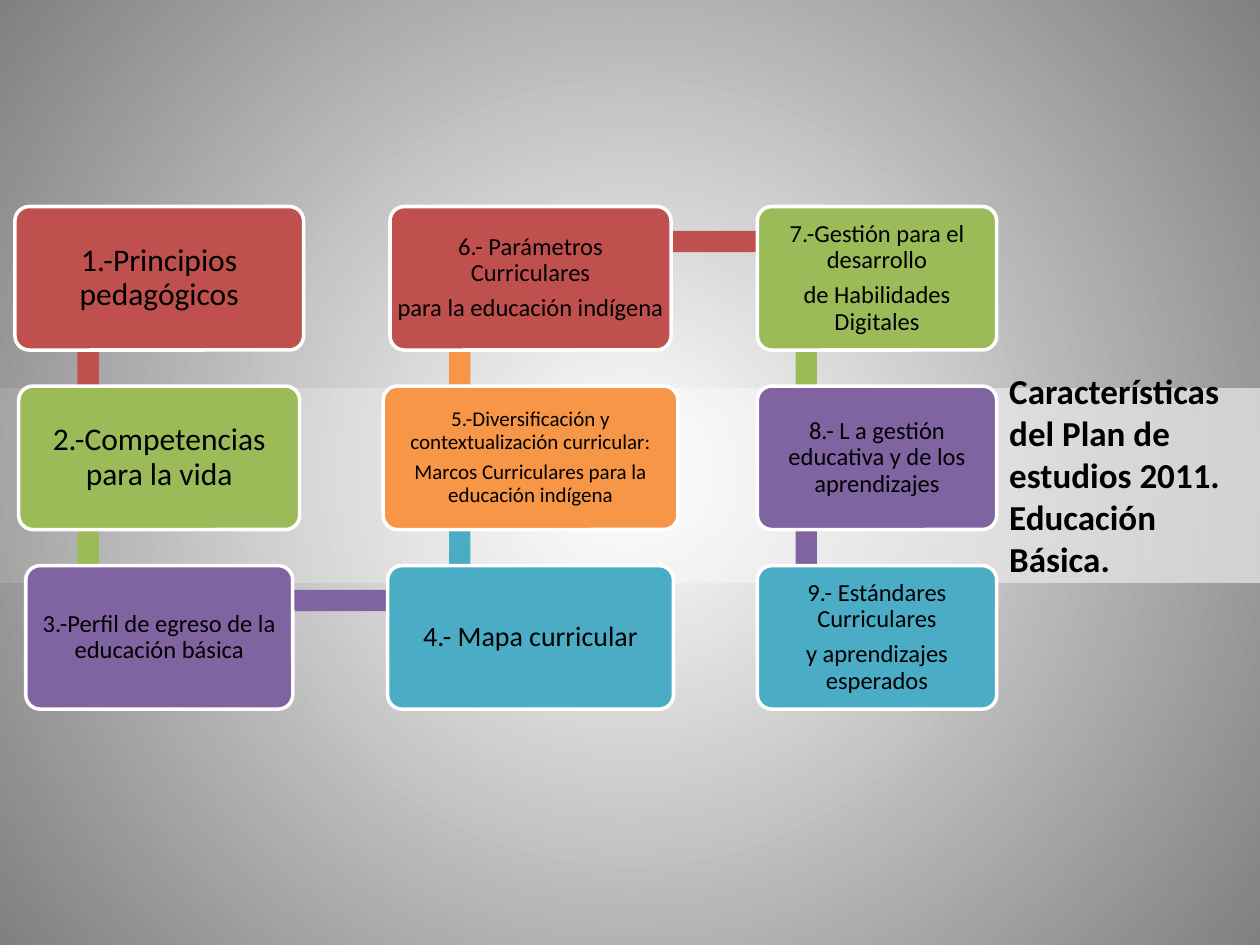
"""Build the slide on the features of the 2011 study plan."""
import pptx
import pptx.dml.color
import pptx.enum.shapes
import pptx.enum.text
import pptx.oxml
import pptx.oxml.ns
import pptx.util
from lxml import etree

Pt = pptx.util.Pt
SHAPE = pptx.enum.shapes.MSO_SHAPE
ALIGN = pptx.enum.text.PP_ALIGN
ANCHOR = pptx.enum.text.MSO_ANCHOR

RED, GREEN, PURPLE = "C0504D", "9BBB59", "8064A2"
TEAL, ORANGE = "4BACC6", "F79646"
WHITE, BLACK, GREY = "FFFFFF", "000000", "808080"

CENTRES = (91, 303.2, 501.2)
BAR_XS = (50.4, 262.8, 460.8)
TOP, ROW_STEP, BOX_H = 118, 102.6, 82
BAR_DROP, BAR_W = 20, 12.2

STEPS = [
    (0, 0, 165, RED, 18, "1.-Principios pedagógicos"),
    (0, 1, 160.6, GREEN, 18, "2.-Competencias para la vida"),
    (0, 2, 152.6, PURPLE, 14, "3.-Perfil de egreso de la educación básica"),
    (1, 2, 163.4, TEAL, 16, "4.- Mapa curricular"),
    (1, 1, 168.5, ORANGE, 12, "5.-Diversificación y contextualización curricular:\n"
                              "Marcos Curriculares para la educación indígena"),
    (1, 0, 160.6, RED, 14, "6.- Parámetros Curriculares\npara la educación indígena"),
    (2, 0, 136.8, GREEN, 14, "7.-Gestión para el desarrollo\nde Habilidades Digitales"),
    (2, 1, 136.8, PURPLE, 14, "8.- L a gestión educativa y de los aprendizajes"),
    (2, 2, 136.8, TEAL, 14, "9.- Estándares Curriculares\ny aprendizajes esperados"),
]
TITLE = "Características\ndel Plan de estudios 2011.\nEducación Básica."


def rgb(value):
    """Return the colour for a hex string."""
    return pptx.dml.color.RGBColor.from_string(value)


def set_gradient(fill, first, last):
    """Give a fill a gradient of two colours."""
    fill.gradient()
    for stop, colour, position in zip(fill.gradient_stops, (first, last), (0, 1)):
        stop.color.rgb = rgb(colour)
        stop.position = position


def add_background(s):
    """Fill the slide with a gradient that spreads from its centre."""
    set_gradient(s.background.fill, WHITE, GREY)
    grad = s._element.xpath(".//p:bg//a:gradFill")[0]
    for lin in grad.xpath("a:lin"):
        grad.remove(lin)
    grad.append(pptx.oxml.parse_xml(
        f'<a:path {pptx.oxml.ns.nsdecls("a")} path="circle">'
        '<a:fillToRect l="50000" t="50000" r="50000" b="50000"/></a:path>'))


def add_block(s, kind, left, top, width, height):
    """Add a preset shape without shadow or line."""
    sp = s.shapes.add_shape(kind, Pt(left), Pt(top), Pt(width), Pt(height))
    sp.shadow.inherit = False
    sp.line.fill.background()
    return sp


def add_band(s):
    """Add the translucent band across the slide."""
    sp = add_block(s, SHAPE.RECTANGLE, 0, 221.8, 720, 110.9)
    set_gradient(sp.fill, WHITE, WHITE)
    sp.fill.gradient_angle = 0
    for clr, opacity in zip(sp._element.xpath(".//a:gs/a:srgbClr"), (12, 57)):
        etree.SubElement(clr, pptx.oxml.ns.qn("a:alpha"), val=str(opacity * 1000))


def set_text(tf, text, size, align, bold=False):
    """Write paragraphs into a text frame and format them."""
    tf.text = text
    tf.word_wrap = True
    for p in tf.paragraphs:
        p.alignment = align
        for r in p.runs:
            r.font.name = "Calibri"
            r.font.size = Pt(size)
            r.font.bold = bold
            r.font.color.rgb = rgb(BLACK)


def place_title(s):
    """Move the title to the right, in front of the band."""
    sp = s.shapes.title
    s.shapes._spTree.append(sp._element)
    sp.left, sp.top, sp.width, sp.height = Pt(569.5), Pt(207.4), Pt(136.8), Pt(128.2)
    tf = sp.text_frame
    tf.auto_size = pptx.enum.text.MSO_AUTO_SIZE.NONE
    tf.vertical_anchor = ANCHOR.TOP
    set_text(tf, TITLE, 20, ALIGN.LEFT, bold=True)


def bar_point(step):
    """Return the point where bars meet behind a step."""
    col, row = step[:2]
    return BAR_XS[col], TOP + row * ROW_STEP + BAR_DROP


def add_bar(s, start, end):
    """Add the bar that joins two successive steps."""
    (x1, y1), (x2, y2) = bar_point(start), bar_point(end)
    sp = add_block(s, SHAPE.RECTANGLE,
                   min(x1, x2) - BAR_W / 2, min(y1, y2) - BAR_W / 2,
                   abs(x2 - x1) + BAR_W, abs(y2 - y1) + BAR_W)
    sp.fill.solid()
    sp.fill.fore_color.rgb = rgb(start[3])


def add_step(s, col, row, width, colour, size, text):
    """Add the rounded box of one step."""
    sp = add_block(s, SHAPE.ROUNDED_RECTANGLE, CENTRES[col] - width / 2,
                   TOP + row * ROW_STEP, width, BOX_H)
    sp.adjustments[0] = 0.1
    sp.fill.solid()
    sp.fill.fore_color.rgb = rgb(colour)
    sp.line.color.rgb = rgb(WHITE)
    sp.line.width = Pt(2)
    tf = sp.text_frame
    tf.margin_left = tf.margin_right = tf.margin_top = tf.margin_bottom = Pt(1.5)
    tf.vertical_anchor = ANCHOR.MIDDLE
    set_text(tf, text, size, ALIGN.CENTER)
    for p in tf.paragraphs:
        p.line_spacing = 0.9
        p.space_after = Pt(size * 0.35)


def main():
    """Build and save the presentation."""
    prs = pptx.Presentation()
    prs.slide_width, prs.slide_height = Pt(720), Pt(540)
    s = prs.slides.add_slide(prs.slide_layouts[5])
    add_background(s)
    add_band(s)
    place_title(s)
    for start, end in zip(STEPS, STEPS[1:]):
        add_bar(s, start, end)
    for step in STEPS:
        add_step(s, *step)
    prs.save("out.pptx")


if __name__ == "__main__":
    main()
